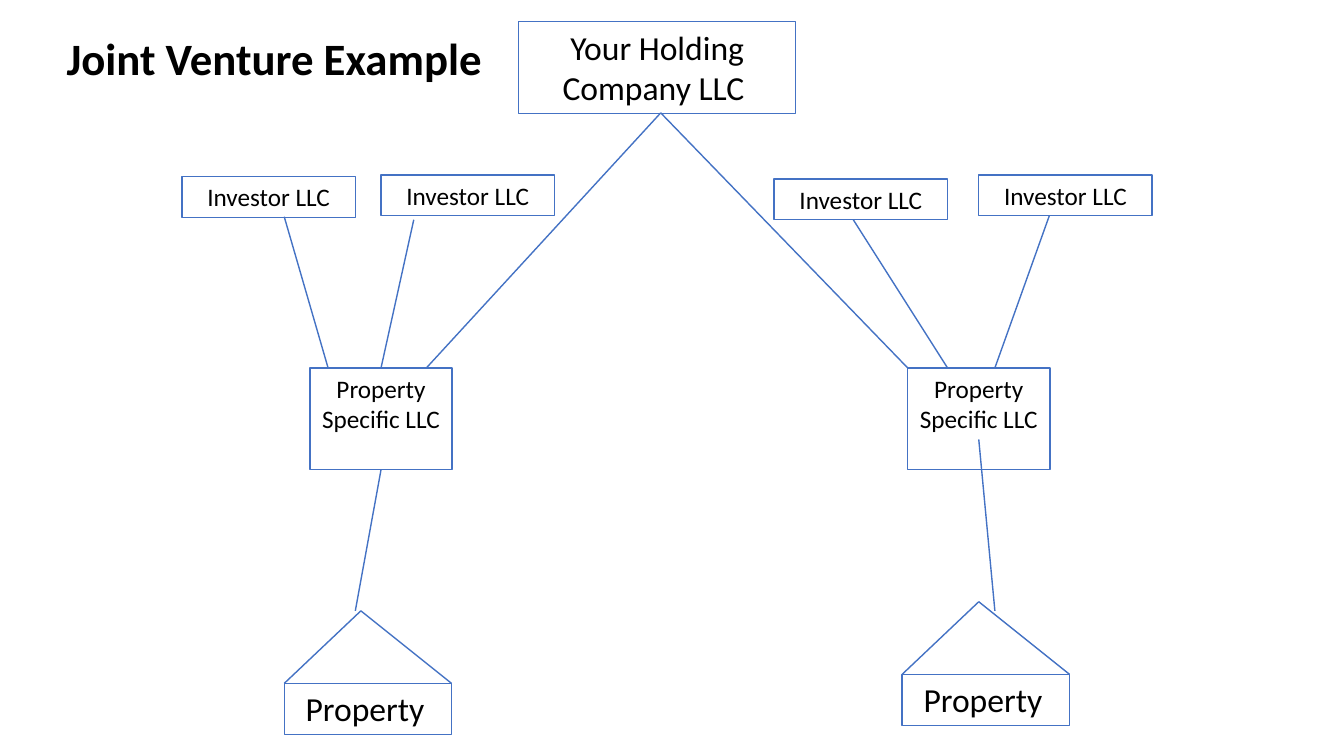
from dataclasses import dataclass
from typing import Optional

from pptx import Presentation
from pptx.dml.color import RGBColor
from pptx.enum.shapes import MSO_CONNECTOR, MSO_SHAPE
from pptx.enum.text import MSO_ANCHOR as ANCHOR, MSO_AUTO_SIZE as FIT, PP_ALIGN as ALIGN
from pptx.oxml.ns import qn
from pptx.util import Inches, Pt

COLORS = {"paper": "FFFFFF", "ink": "000000", "line": "4472C4"}
FONT = "Calibri"
CELL = Inches(0.1)  # square grid: 133.33 columns by 75 rows
COLS, ROWS = 133.33, 75
TOP, BOTTOM = 0, 2  # connection sites of a rectangle


@dataclass(frozen=True)
class Box:
    key: str
    text: str
    col: float
    row: float
    cols: float
    rows: float
    size: int = 18
    tail: str = ""  # closing run in the base size


@dataclass(frozen=True)
class Link:
    start: tuple[float, float]
    end: tuple[float, float]
    start_box: Optional[str] = None  # joined at its bottom
    end_box: Optional[str] = None  # joined at its top


BASE_SIZE = 18
INVESTOR_SIZE = (17.2, 4.04)
ENTITY_SIZE = (14.1, 10.1)
HOUSE_SIZE = (16.6, 5.05)
APEX_COLS, ROOF_ROWS = 7.6, 7.2

HOUSES = [Box(f"house {i}", "Property", col, row, *HOUSE_SIZE, 24, " ")
          for i, (col, row) in enumerate([(28.2, 67.8), (89.5, 66.9)], 1)]
BOXES = [
    Box("holding", "Your Holding Company LLC ", 51.45, 2.15, 27.5, 9.1, 24),
    *[Box(f"entity {i}", "Property Specific LLC", col, 36.5, *ENTITY_SIZE)
      for i, col in enumerate([30.75, 90.05], 1)],
    *[Box(f"investor {i}", "Investor LLC", col, row, *INVESTOR_SIZE)
      for i, (col, row) in enumerate(
          [(18.05, 17.52), (37.8, 17.37), (76.8, 17.77), (97.1, 17.37)], 1)],
    *HOUSES,
]
HOLDING_EXIT = (65.55, 11.2)
LINKS = [
    Link((28.2, 21.5), (32.55, 36.5)),
    Link((41.05, 21.8), (37.8, 36.5), end_box="entity 1"),
    Link((84.65, 21.8), (94, 36.5)),
    Link((104.1, 21.4), (98.7, 36.5)),
    Link(HOLDING_EXIT, (42.3, 36.5)),
    Link(HOLDING_EXIT, (90.05, 36.5)),
    Link((37.8, 46.6), (35.25, 60.6), start_box="entity 1"),
    Link((97.1, 43.6), (98.7, 60.6)),
]


def grid(cells: float) -> int:
    return round(cells * CELL)


def color(name: str) -> RGBColor:
    return RGBColor.from_string(COLORS[name])


def write(sp, text: str, *, size: int, tail: str = "", bold: bool = False,
          align=ALIGN.CENTER, wrap: bool = True, fit=FIT.SHAPE_TO_FIT_TEXT) -> None:
    tf = sp.text_frame
    tf.word_wrap, tf.auto_size, tf.vertical_anchor = wrap, fit, ANCHOR.TOP
    p = tf.paragraphs[0]
    p.alignment = align
    for part, points in ((text, size), (tail, BASE_SIZE)):
        if part:
            r = p.add_run()
            r.text = part
            r.font.name, r.font.size, r.font.bold = FONT, Pt(points), bold
            r.font.color.rgb = color("ink")


def draw_box(slide, box: Box):
    sp = slide.shapes.add_shape(MSO_SHAPE.RECTANGLE, grid(box.col), grid(box.row),
                                grid(box.cols), grid(box.rows))
    sp.shadow.inherit = False
    sp.fill.solid()
    sp.fill.fore_color.rgb = color("paper")
    sp.line.color.rgb = color("line")
    sp.line.width = Pt(1)
    write(sp, box.text, size=box.size, tail=box.tail)
    return sp


def draw_link(slide, link: Link, drawn: dict) -> None:
    cx = slide.shapes.add_connector(MSO_CONNECTOR.STRAIGHT,
                                    *map(grid, link.start), *map(grid, link.end))
    cx.line.color.rgb = color("line")
    cx.line.width = Pt(1)
    sp_pr = cx._element.spPr
    sp_pr.append(sp_pr.makeelement(qn("a:effectLst"), {}))
    if link.start_box:
        cx.begin_connect(drawn[link.start_box], BOTTOM)
    if link.end_box:
        cx.end_connect(drawn[link.end_box], TOP)


def roof(house: Box) -> list[Link]:
    apex = (house.col + APEX_COLS, house.row - ROOF_ROWS)
    return [Link(apex, (eave, house.row)) for eave in (house.col, house.col + house.cols)]


def main() -> None:
    prs = Presentation()
    prs.slide_width, prs.slide_height = grid(COLS), grid(ROWS)
    slide = prs.slides.add_slide(prs.slide_layouts[5])

    title = slide.shapes.title
    title.left, title.top, title.width, title.height = map(grid, (5.6, 2.55, 43.6, 6.4))
    write(title, "Joint Venture Example", size=32, bold=True, align=ALIGN.LEFT,
          wrap=False, fit=FIT.NONE)

    drawn = {box.key: draw_box(slide, box) for box in BOXES}
    for link in LINKS + [side for house in HOUSES for side in roof(house)]:
        draw_link(slide, link, drawn)

    prs.save("out.pptx")


if __name__ == "__main__":
    main()
